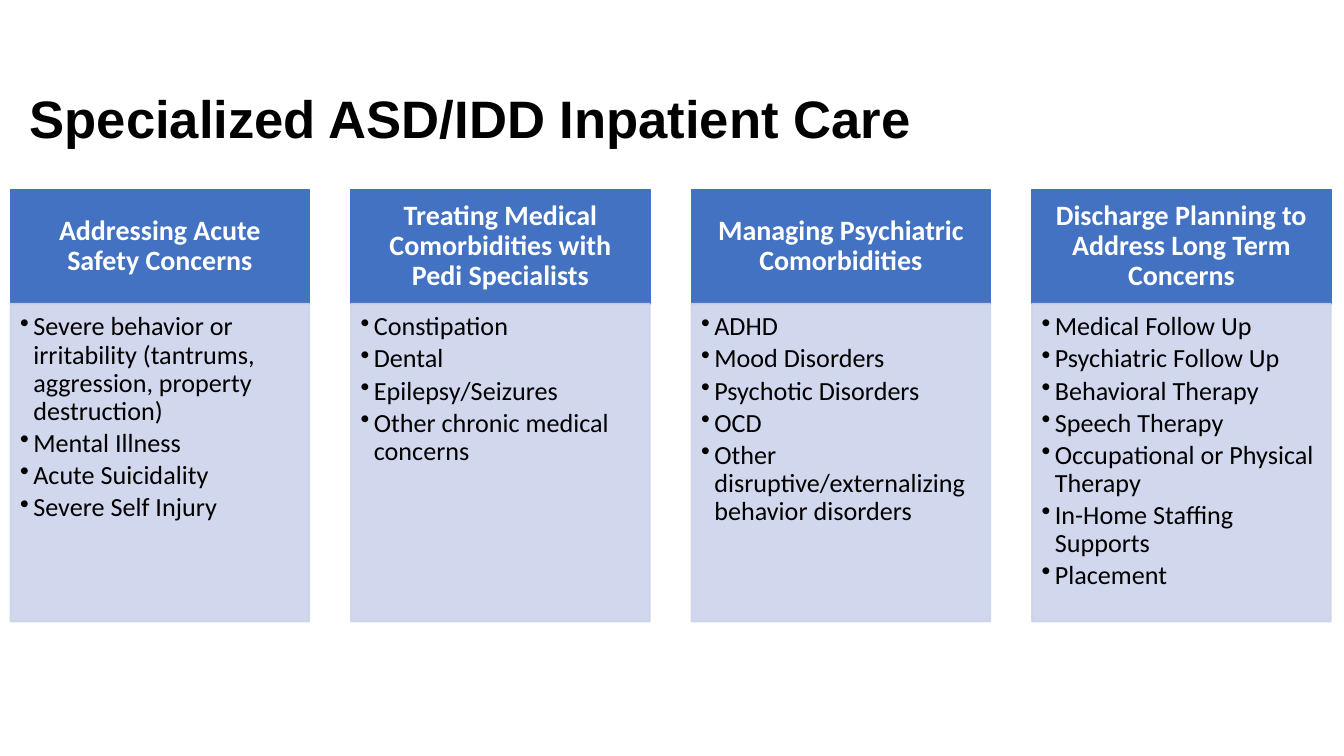
from lxml import etree
from pptx import Presentation
from pptx.dml.color import RGBColor
from pptx.enum.shapes import MSO_SHAPE
from pptx.enum.text import MSO_ANCHOR, MSO_AUTO_SIZE, PP_ALIGN
from pptx.oxml.ns import qn
from pptx.util import Cm, Pt

RECT = MSO_SHAPE.RECTANGLE
TOP, MIDDLE = MSO_ANCHOR.TOP, MSO_ANCHOR.MIDDLE
LEFT, CENTER = PP_ALIGN.LEFT, PP_ALIGN.CENTER
NO_FIT = MSO_AUTO_SIZE.NONE

BLUE = RGBColor(0x43, 0x72, 0xC3)
PALE = RGBColor(0xCC, 0xD3, 0xEA)
WHITE = RGBColor(0xFF, 0xFF, 0xFF)
BLACK = RGBColor(0, 0, 0)

COLUMNS = [
    ("Addressing Acute Safety Concerns",
     ["Severe behavior or irritability (tantrums, aggression, property destruction)",
      "Mental Illness", "Acute Suicidality", "Severe Self Injury"]),
    ("Treating Medical Comorbidities with Pedi Specialists",
     ["Constipation", "Dental", "Epilepsy/Seizures",
      "Other chronic medical concerns"]),
    ("Managing Psychiatric Comorbidities",
     ["ADHD", "Mood Disorders", "Psychotic Disorders", "OCD",
      "Other disruptive/externalizing behavior disorders"]),
    ("Discharge Planning to Address Long Term Concerns",
     ["Medical Follow Up", "Psychiatric Follow Up", "Behavioral Therapy",
      "Speech Therapy", "Occupational or Physical Therapy",
      "In-Home Staffing Supports", "Placement"]),
]


def set_frame(tf, anchor, left, top, right, bottom):
    tf.word_wrap = True
    tf.auto_size = NO_FIT
    tf.vertical_anchor = anchor
    tf.margin_left, tf.margin_top = Cm(left), Cm(top)
    tf.margin_right, tf.margin_bottom = Cm(right), Cm(bottom)


def add_run(p, text, font, size, color, bold=False):
    p.line_spacing = 0.9
    r = p.add_run()
    r.text = text
    r.font.name, r.font.size, r.font.bold = font, Pt(size), bold
    r.font.color.rgb = color


def add_bullet(p):
    pPr = p._p.get_or_add_pPr()
    pPr.set("marL", str(Cm(0.25)))
    pPr.set("indent", str(-Cm(0.25)))
    color = etree.SubElement(pPr, qn("a:buClr"))
    etree.SubElement(color, qn("a:srgbClr"), val=str(BLACK))
    etree.SubElement(pPr, qn("a:buChar"), char="•")


def add_panel(s, x, y, w, h, color, opacity=100):
    sp = s.shapes.add_shape(RECT, Cm(x), Cm(y), Cm(w), Cm(h))
    sp.shadow.inherit = False
    sp.fill.solid()
    sp.fill.fore_color.rgb = color
    sp.line.color.rgb = color
    sp.line.width = Pt(1)
    if opacity < 100:
        for clr in sp._element.spPr.iter(qn("a:srgbClr")):
            etree.SubElement(clr, qn("a:alpha"), val=str(opacity * 1000))
    return sp


def add_title(s, x, y, w, h):
    sp = s.shapes.title
    sp.left, sp.top, sp.width, sp.height = Cm(x), Cm(y), Cm(w), Cm(h)
    set_frame(sp.text_frame, MIDDLE, 0.18, 0.1, 0.18, 0.1)
    p = sp.text_frame.paragraphs[0]
    p.alignment = LEFT
    add_run(p, "Specialized ASD/IDD Inpatient Care", "Arial", 28.2, BLACK, True)


def add_column(s, x, y, w, h, heading, items):
    head_h = 2.16
    head = add_panel(s, x, y, w, head_h, BLUE)
    set_frame(head.text_frame, MIDDLE, 0.23, 0.13, 0.23, 0.13)
    p = head.text_frame.paragraphs[0]
    p.alignment = CENTER
    add_run(p, heading, "Calibri", 15, WHITE, True)

    body = add_panel(s, x, y + head_h, w, h - head_h, PALE, 90)
    tf = body.text_frame
    set_frame(tf, TOP, 0.18, 0.18, 0.23, 0.25)
    for i, item in enumerate(items):
        p = tf.add_paragraph() if i else tf.paragraphs[0]
        p.level = 1
        add_bullet(p)
        p.alignment = LEFT
        p.space_before = Pt(2 if i else 0)
        add_run(p, item, "Calibri", 14, BLACK)


def add_columns(s, x, y, w, h):
    gap = 0.79
    col_w = (w - gap * (len(COLUMNS) - 1)) / len(COLUMNS)
    for i, (heading, items) in enumerate(COLUMNS):
        add_column(s, x + i * (col_w + gap), y, col_w, h, heading, items)


def main():
    prs = Presentation()
    prs.slide_width, prs.slide_height = Cm(25.4), Cm(14.28)
    s = prs.slides.add_slide(prs.slide_layouts[5])
    add_columns(s, 0.2, 3.58, 24.95, 8.16)
    add_title(s, 0.38, 0.61, 19.28, 3.35)
    prs.save("out.pptx")


if __name__ == "__main__":
    main()
